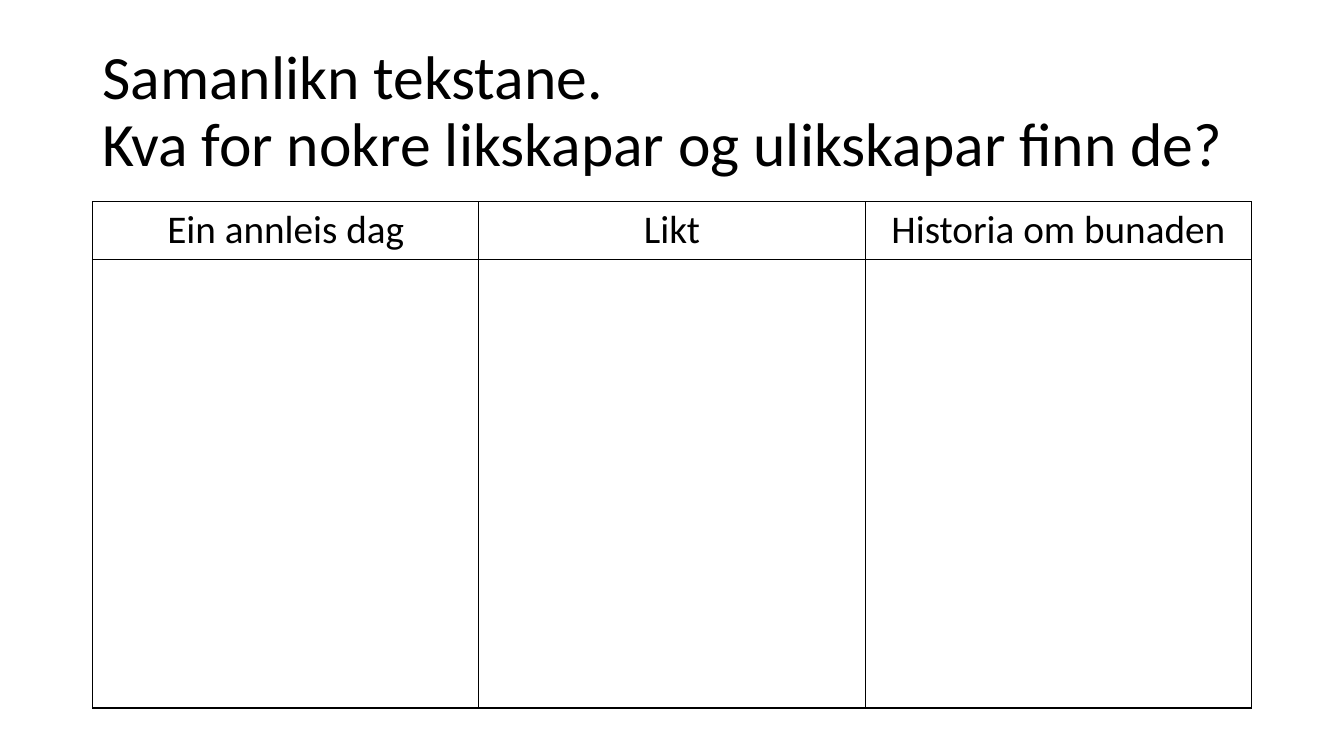
from lxml.etree import SubElement
from pptx import Presentation
from pptx.dml.color import RGBColor
from pptx.enum.text import MSO_ANCHOR, PP_ALIGN
from pptx.oxml.ns import qn
from pptx.util import Cm, Pt


def color(value):
    return RGBColor.from_string(value)


class ComparisonPage:
    font_name = "Calibri"
    ink = "000000"

    def __init__(self, deck):
        self.page = deck.slides.add_slide(deck.slide_layouts[6])

    def set_text(self, para, text, size):
        para.text = text
        para.font.name = self.font_name
        para.font.size = Pt(size)
        para.font.color.rgb = color(self.ink)

    def title(self, text, left, top, width, height):
        box = self.page.shapes.add_textbox(Cm(left), Cm(top), Cm(width), Cm(height))
        frame = box.text_frame
        frame.word_wrap = True
        frame.vertical_anchor = MSO_ANCHOR.MIDDLE
        para = frame.paragraphs[0]
        self.set_text(para, text, 44)
        para.line_spacing = 0.9

    def borders(self, cell):
        properties = cell._tc.get_or_add_tcPr()
        for index, side in enumerate(("lnL", "lnR", "lnT", "lnB")):
            line = properties.makeelement(qn(f"a:{side}"), {"w": str(Pt(1))})
            fill = SubElement(line, qn("a:solidFill"))
            SubElement(fill, qn("a:srgbClr"), val=self.ink)
            properties.insert(index, line)

    def table(self, headings, left, top, width, row_heights):
        frame = self.page.shapes.add_table(
            len(row_heights), len(headings),
            Cm(left), Cm(top), Cm(width), Cm(sum(row_heights)))
        table = frame.table
        table.first_row = table.horz_banding = False
        for row, height in zip(table.rows, row_heights):
            row.height = Cm(height)
        for cell in table.iter_cells():
            cell.fill.background()
            self.borders(cell)
        for cell, heading in zip(table.rows[0].cells, headings):
            para = cell.text_frame.paragraphs[0]
            self.set_text(para, heading, 28)
            para.alignment = PP_ALIGN.CENTER


def main():
    deck = Presentation()
    deck.slide_width, deck.slide_height = Cm(33.87), Cm(19.05)
    comparison = ComparisonPage(deck)

    # Question to the pupils
    comparison.title(
        "Samanlikn tekstane.\vKva for nokre likskapar og ulikskapar finn de?",
        2.33, 1.01, 29.21, 3.68)

    # Empty comparison table with headings
    comparison.table(
        ("Ein annleis dag", "Likt", "Historia om bunaden"),
        2.33, 5.08, 29.21, (1.46, 11.3))

    deck.save("out.pptx")


if __name__ == "__main__":
    main()
